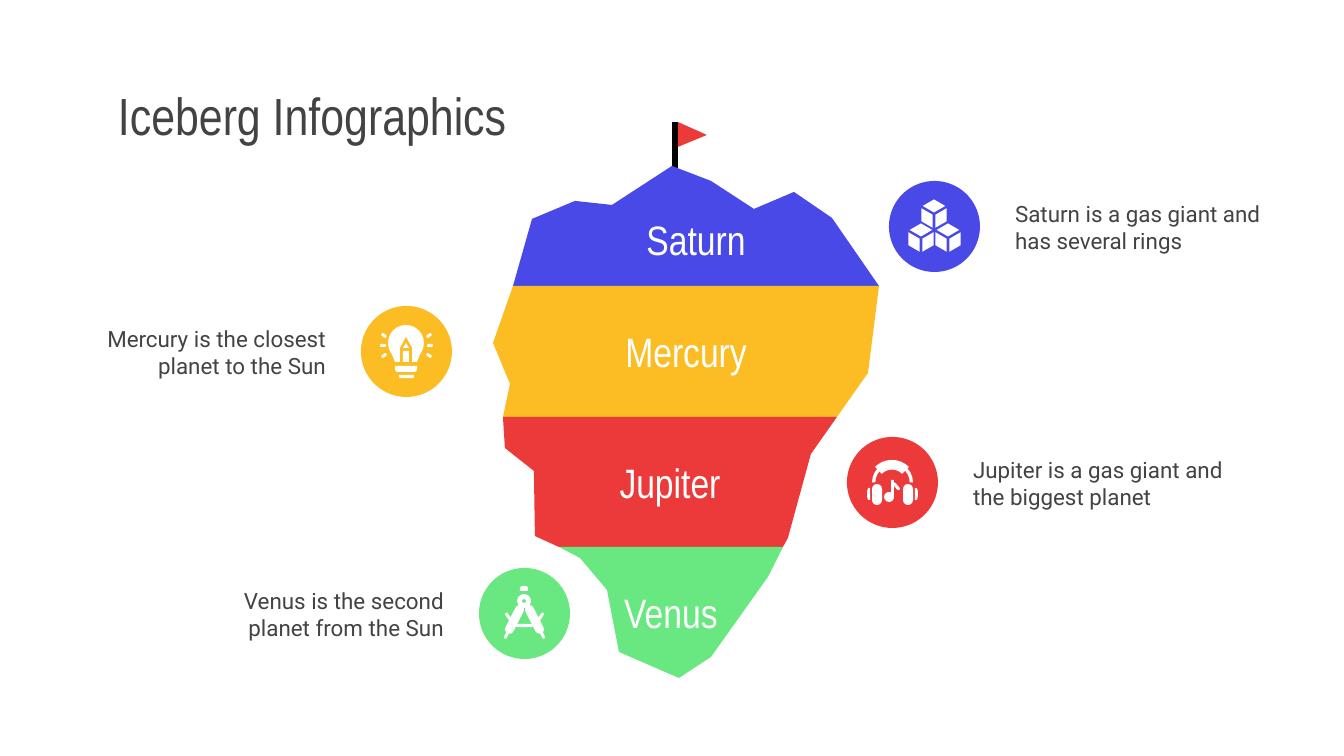
"""Build the iceberg infographic slide with four labelled layers."""
from itertools import product
from math import cos, radians, sin

from pptx import Presentation
from pptx import util as u
from pptx.dml.color import RGBColor
from pptx.enum import shapes, text

PX = 914400 / 134.4
COLORS = {"saturn": "4949E7", "mercury": "FCBD24", "jupiter": "EC3A3B",
          "venus": "69E781", "white": "FFFFFF", "ink": "434343", "pole": "000000"}
BADGE, PAD, NOTE_W, NOTE_H, NOTE_DROP, NOTE_GAP = 91, 13, 277, 78, 6, 22

LEVELS = [166, 286, 417, 547, 678]
LEFT_EDGE = [(672, 166), (612, 205), (575, 201), (532, 219), (513, 286),
             (493, 343), (510, 384), (503, 417), (505, 448), (534, 471),
             (535, 536), (559, 547), (580, 558), (607, 590), (619, 652), (679, 678)]
RIGHT_EDGE = [(711, 181), (754, 209), (794, 192), (832, 218), (879, 286),
              (868, 373), (837, 417), (811, 454), (788, 538), (783, 547),
              (768, 577), (711, 657)]
LAYERS = [
    ("saturn", "Saturn is a gas giant and has several rings", (889, 181), "right", 40),
    ("mercury", "Mercury is the closest planet to the Sun", (361, 306), "left", PAD),
    ("jupiter", "Jupiter is a gas giant and the biggest planet", (847, 437), "right", PAD),
    ("venus", "Venus is the second planet from the Sun", (479, 568), "left", PAD),
]

M = shapes.MSO_SHAPE
KINDS = {"oval": (M.OVAL, []), "box": (M.RECTANGLE, []), "pill": (M.ROUNDED_RECTANGLE, [0.5]),
         "tip": (M.ISOSCELES_TRIANGLE, []), "neck": (M.TRAPEZOID, [0.4]),
         "dome": (M.ROUND_2_SAME_RECTANGLE, [0.5, 0]), "half": (M.FLOWCHART_DELAY, []),
         "ring": (M.DONUT, [0.36]), "band": (M.BLOCK_ARC, [108, 0, 0.08]),
         "cushion": (M.BLOCK_ARC, [135, 189, 0.2])}
CUBE_CENTERS, CUBE_R, CUBE_GAP = [(45, 33), (32, 57), (59, 57)], 13, 1.5
PAIRS = {
    "mercury": [("pill", 19, 38, 6, 3, 0), ("pill", 20, 28, 6, 3, 36),
                ("pill", 20, 48, 6, 3, -36)],
    "jupiter": [("pill", 25, 47, 10, 21, 0), ("half", 20, 51, 3, 12, 180)],
    "venus": [("pill", 31, 36, 9, 31, 27), ("pill", 28, 44, 3, 10, -35),
              ("pill", 26, 63, 3, 8, 27)],
}
PARTS = {
    "mercury": [("oval", 27, 19, 36, 36, 0), ("neck", 30, 46, 30, 10, 180),
                ("box", 39, 42, 12, 14, 0, "mercury"), ("tip", 39, 31, 12, 11, 0, "mercury"),
                ("box", 42, 45, 6, 11, 0), ("tip", 42, 37, 6, 5, 0),
                ("dome", 34, 60, 22, 6, 180), ("dome", 38, 69, 15, 3, 180)],
    "jupiter": [("band", 25, 25, 41, 41, 0), ("cushion", 21, 23, 48, 48, 0),
                ("oval", 37, 55, 10, 10, 0), ("box", 44, 43, 3, 17, 0),
                ("pill", 45, 48, 9, 3, 50)],
    "venus": [("ring", 38, 26, 14, 14, 0), ("dome", 41, 18, 8, 5, 0),
              ("pill", 37, 56, 17, 3, 0)],
}


def px(*values):
    """Convert px lengths to EMU."""
    return [u.Emu(round(v * PX)) for v in values]


def paint(sp, color):
    """Give a shape a flat fill without line or shadow."""
    sp.fill.solid()
    sp.fill.fore_color.rgb = RGBColor.from_string(COLORS[color])
    sp.line.fill.background()
    sp.shadow.inherit = False
    return sp


def draw_outline(slide, color, points):
    """Draw a closed filled outline."""
    pts = [tuple(px(*point)) for point in points]
    builder = slide.shapes.build_freeform(*pts[0])
    builder.add_line_segments(pts[1:], close=True)
    return paint(builder.convert_to_shape(), color)


def draw_part(slide, origin, kind, x, y, w, h, rotation, color="white"):
    """Draw one preset piece of an icon."""
    preset, adjustments = KINDS[kind]
    sp = slide.shapes.add_shape(preset, *px(origin[0] + x, origin[1] + y, w, h))
    for i, value in enumerate(adjustments):
        sp.adjustments[i] = value
    sp.rotation = rotation
    paint(sp, color)


def draw_cubes(slide, origin):
    """Draw a stack of cubes, each as three rhombic faces."""
    def move(point, angle, distance):
        a = radians(angle)
        return point[0] + distance * cos(a), point[1] + distance * sin(a)

    for (x, y), axis in product(CUBE_CENTERS, (-90, 30, 150)):
        start = move((origin[0] + x, origin[1] + y), axis, CUBE_GAP)
        corners = [move(start, axis + turn, CUBE_R) for turn in (-60, 0, 60)]
        draw_outline(slide, "white", [start] + corners)


def draw_icon(slide, key, origin):
    """Draw the icon of one layer."""
    if key == "saturn":
        draw_cubes(slide, origin)
        return
    for kind, x, y, w, h, rotation in PAIRS[key]:
        draw_part(slide, origin, kind, x, y, w, h, rotation)
        draw_part(slide, origin, kind, BADGE - x - w, y, w, h, 180 - rotation
                  if kind == "half" else -rotation)
    for part in PARTS[key]:
        draw_part(slide, origin, *part)


def write(sp, words, size, font, color, align, anchor, top_pad=PAD):
    """Put formatted text into a shape."""
    tf = sp.text_frame
    left, top, right, bottom = px(PAD, top_pad, PAD, PAD)
    frame = {"word_wrap": True, "auto_size": text.MSO_AUTO_SIZE.NONE,
             "vertical_anchor": anchor, "margin_left": left, "margin_top": top,
             "margin_right": right, "margin_bottom": bottom}
    for name, value in frame.items():
        setattr(tf, name, value)
    p = tf.paragraphs[0]
    p.alignment = align
    r = p.add_run()
    r.text = words
    for name, value in {"size": u.Pt(size), "name": font, "bold": False}.items():
        setattr(r.font, name, value)
    r.font.color.rgb = RGBColor.from_string(COLORS[color])


def draw_layer(slide, top, bottom, key, note, badge, side, top_pad):
    """Draw one iceberg layer with its badge, icon and note."""
    left, right = ([pt for pt in edge if top <= pt[1] <= bottom]
                   for edge in (LEFT_EDGE, RIGHT_EDGE))
    sp = draw_outline(slide, key, left + right[::-1])
    write(sp, key.title(), 22, "Arial Narrow", "white", text.PP_ALIGN.CENTER,
          text.MSO_ANCHOR.MIDDLE, top_pad)
    draw_part(slide, badge, "oval", 0, 0, BADGE, BADGE, 0, key)
    draw_icon(slide, key, badge)
    offset, align = {"left": (-NOTE_W - NOTE_GAP, text.PP_ALIGN.RIGHT),
                     "right": (BADGE + NOTE_GAP, text.PP_ALIGN.LEFT)}[side]
    x, y = badge
    box = slide.shapes.add_textbox(*px(x + offset, y + NOTE_DROP, NOTE_W, NOTE_H))
    write(box, note, 12, "Roboto", "ink", align, text.MSO_ANCHOR.TOP)


def main():
    """Assemble and save the slide."""
    prs = Presentation()
    prs.slide_width, prs.slide_height = px(1344, 756)
    slide = prs.slides.add_slide(prs.slide_layouts[5])
    title = slide.shapes.title
    title.left, title.top, title.width, title.height = px(105, 79, 508, 71)
    write(title, "Iceberg Infographics", 28, "Arial Narrow", "ink",
          text.PP_ALIGN.LEFT, text.MSO_ANCHOR.MIDDLE)
    draw_part(slide, (672, 122), "box", 0, 0, 6, 46, 0, "pole")
    draw_outline(slide, "jupiter", [(678, 122), (678, 147), (707, 135)])
    for top, bottom, layer in zip(LEVELS, LEVELS[1:], LAYERS):
        draw_layer(slide, top, bottom, *layer)
    prs.save("out.pptx")


if __name__ == "__main__":
    main()
